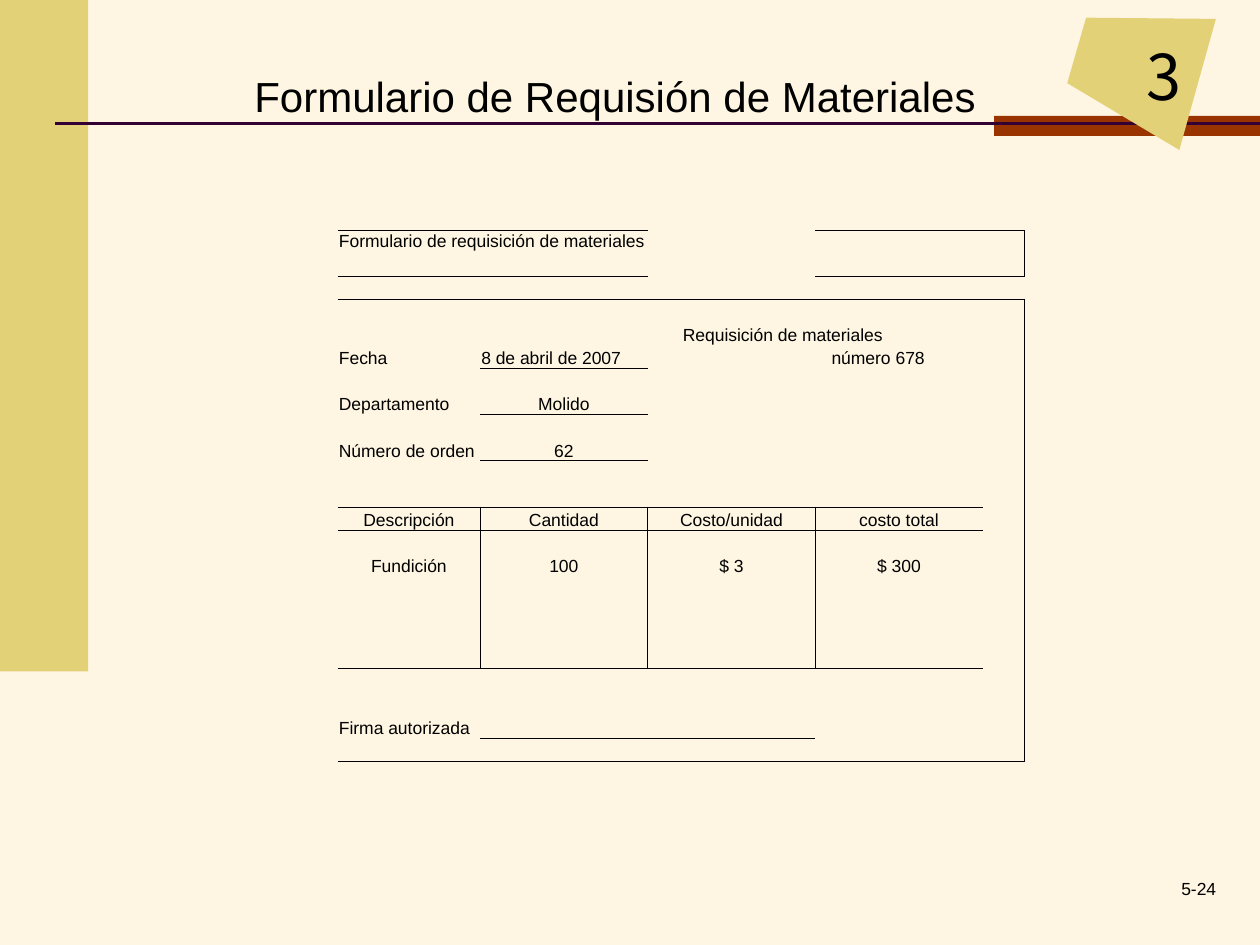
from collections import defaultdict

from lxml import etree
from pptx import Presentation
from pptx.dml.color import RGBColor
from pptx.enum import shapes, text
from pptx.oxml import ns
from pptx.util import Inches, Pt

CREAM = RGBColor(0xFE, 0xF6, 0xE2)
SAND = RGBColor(0xE3, 0xD1, 0x77)
RUST = RGBColor(0x99, 0x33, 0x00)
PLUM = RGBColor(0x33, 0x00, 0x33)
BLACK = RGBColor(0x00, 0x00, 0x00)

NO_STYLE = "{2D5ABB26-0587-4C30-8999-92F81FD0307C}"
LEFT, CENTER, RIGHT = text.PP_ALIGN.LEFT, text.PP_ALIGN.CENTER, text.PP_ALIGN.RIGHT

COLUMNS = [1.13, 1.33, 1.33, 1.33, 0.33]
ROW_COUNT = 22
HEADER_HEIGHT = 0.36

ENTRIES = {
    (0, 0): ("Formulario de requisición de materiales", LEFT, 0.01),
    (3, 2): ("Requisición de materiales", LEFT, 0.28),
    (4, 0): ("Fecha", LEFT, 0.01),
    (4, 1): ("8 de abril de 2007", LEFT, 0.01),
    (4, 3): ("número 678", LEFT, 0.13),
    (6, 0): ("Departamento", LEFT, 0.01),
    (6, 1): ("Molido", CENTER, 0.01),
    (8, 0): ("Número de orden", LEFT, 0.01),
    (8, 1): ("62", CENTER, 0.01),
    (20, 0): ("Firma autorizada", LEFT, 0.01),
}
ITEMS = {
    11: ["Descripción", "Cantidad", "Costo/unidad", "costo total"],
    13: ["Fundición", "100", "$ 3", "$ 300"],
}
RULES = [
    ("T", [0], [0, 1, 3, 4]),
    ("B", [0], [0, 1, 3, 4]),
    ("B", [1, 21], range(5)),
    ("B", [4, 6, 8], [1]),
    ("B", [10, 11, 17], range(4)),
    ("B", [20], [1, 2]),
    ("R", range(11, 18), range(3)),
    ("R", [0, *range(2, ROW_COUNT)], [4]),
]


def paint(shape, color):
    """Give a shape a plain fill without outline or shadow."""
    shape.shadow.inherit = False
    shape.fill.solid()
    shape.fill.fore_color.rgb = color
    shape.line.fill.background()


def style(paragraph, size, align=LEFT, font="Arial"):
    """Set the font and alignment of a paragraph."""
    paragraph.alignment = align
    paragraph.font.name = font
    paragraph.font.size = Pt(size)
    paragraph.font.color.rgb = BLACK


def add_label(slide, box, words, size, align=LEFT, font="Arial"):
    """Place one line of text in a box."""
    frame = slide.shapes.add_textbox(*map(Inches, box)).text_frame
    frame.word_wrap = True
    frame.text = words
    style(frame.paragraphs[0], size, align, font)
    for run in frame.paragraphs[0].runs:
        for script in ("a:ea", "a:cs"):
            etree.SubElement(run._r.get_or_add_rPr(), ns.qn(script), typeface=font)


def add_band(slide, box, color):
    """Place a plain coloured rectangle."""
    band = slide.shapes.add_shape(shapes.MSO_SHAPE.RECTANGLE, *map(Inches, box))
    paint(band, color)


def add_title_rule(slide, left, y, right):
    """Draw the rule under the title with the bar at its right end."""
    add_band(slide, (right - 2.11, y - 0.06, 2.11, 0.16), RUST)
    rule = slide.shapes.add_connector(
        shapes.MSO_CONNECTOR.STRAIGHT, *map(Inches, (left, y, right, y)))
    rule.line.color.rgb = PLUM
    rule.line.width = Pt(1.5)
    etree.SubElement(rule._element.spPr, ns.qn("a:effectLst"))


def add_badge(slide, left, top, number):
    """Draw the tilted chapter badge with its number."""
    corners = [(1.18, 0.01), (0.15, 0), (0, 0.52), (0.89, 1.05)]
    points = [(Inches(left + x), Inches(top + y)) for x, y in corners]
    outline = slide.shapes.build_freeform(*points[0])
    outline.add_line_segments(points[1:], close=True)
    paint(outline.convert_to_shape(), SAND)
    add_label(slide, (left + 0.53, top + 0.11, 0.58, 0.7), number, 36,
              font="Noto Sans CJK KR")


def collect_borders():
    """Map each cell to its ruled sides, shared edges on both neighbours."""
    borders = defaultdict(set)
    for side, rows, columns in RULES:
        for row in rows:
            for column in columns:
                borders[row, column].add(side)
                if side == "B":
                    borders[row + 1, column].add("T")
                elif side == "R":
                    borders[row, column + 1].add("L")
    return borders


def draw_borders(cell, sides):
    """Rule the given sides of a cell and clear the others."""
    properties = cell._tc.get_or_add_tcPr()
    for position, side in enumerate("LRTB"):
        line = etree.Element(ns.qn(f"a:ln{side}"), w=str(Pt(0.5)))
        if side in sides:
            fill = etree.SubElement(line, ns.qn("a:solidFill"))
            etree.SubElement(fill, ns.qn("a:srgbClr"), val=str(BLACK))
        else:
            etree.SubElement(line, ns.qn("a:noFill"))
        properties.insert(position, line)


def add_form(slide, left, top, height):
    """Build the materials requisition form as a table."""
    form = slide.shapes.add_table(
        ROW_COUNT, len(COLUMNS),
        *map(Inches, (left, top, sum(COLUMNS), height))).table
    form._tbl.tblPr.find(ns.qn("a:tableStyleId")).text = NO_STYLE
    form.first_row = form.horz_banding = False
    for column, width in zip(form.columns, COLUMNS):
        column.width = Inches(width)
    for row in form.rows:
        row.height = Inches((height - HEADER_HEIGHT) / (ROW_COUNT - 1))
    form.rows[0].height = Inches(HEADER_HEIGHT)

    entries = dict(ENTRIES)
    for row, words in ITEMS.items():
        entries.update({(row, c): (word, CENTER, 0.01) for c, word in enumerate(words)})
    borders = collect_borders()
    for row in range(ROW_COUNT):
        for column in range(len(COLUMNS)):
            cell = form.cell(row, column)
            words, align, indent = entries.get((row, column), ("", LEFT, 0.01))
            cell.text = words
            style(cell.text_frame.paragraphs[0], 10, align)
            cell.margin_left = Inches(indent)
            cell.margin_right = cell.margin_top = Inches(0.01)
            cell.margin_bottom = 0
            cell.vertical_anchor = text.MSO_ANCHOR.BOTTOM if row else text.MSO_ANCHOR.TOP
            cell.fill.background()
            draw_borders(cell, borders[row, column])
    form.cell(0, 0).merge(form.cell(0, 1))
    form.cell(3, 2).merge(form.cell(3, 3))


def main():
    """Build the requisition form slide."""
    deck = Presentation()
    deck.slide_width, deck.slide_height = Inches(10), Inches(7.5)
    slide = deck.slides.add_slide(deck.slide_layouts[6])
    slide.background.fill.solid()
    slide.background.fill.fore_color.rgb = CREAM
    add_band(slide, (0, 0, 0.7, 5.33), SAND)
    add_title_rule(slide, 0.44, 0.98, 10)
    add_label(slide, (9, 6.92, 0.75, 0.17), "5-24", 10, RIGHT)
    add_badge(slide, 8.47, 0.14, "3")
    add_label(slide, (1.92, 0.51, 6.5, 0.51), "Formulario de Requisión de Materiales", 24)
    add_form(slide, 2.68, 1.83, 4.22)
    deck.save("out.pptx")


if __name__ == "__main__":
    main()
